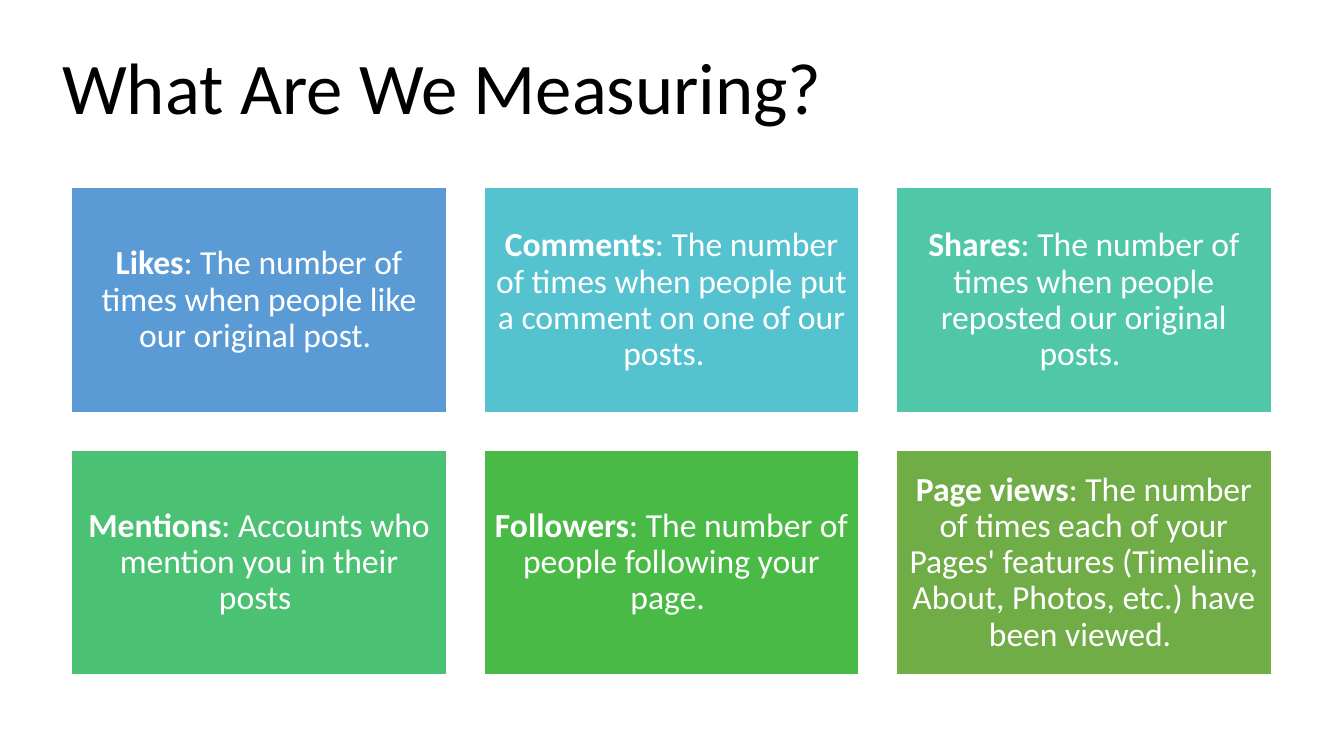
from dataclasses import dataclass

from pptx import Presentation
from pptx import util as u
from pptx.dml import color
from pptx.enum import shapes, text


@dataclass(frozen=True)
class Theme:
    font: str = "Calibri"
    title_size: float = 52
    card_size: float = 24
    ink: str = "000000"
    paper: str = "FFFFFF"
    blue: str = "5B9BD5"
    cyan: str = "55C3CF"
    teal: str = "50C8A7"
    mint: str = "4BC174"
    green: str = "4ABA46"
    olive: str = "70AD47"


@dataclass(frozen=True)
class Metric:
    name: str
    meaning: str
    fill: str


THEME = Theme()
COLUMNS = 3
CARD_LEFT, CARD_TOP = 51.1, 134.1
CARD_WIDTH, CARD_HEIGHT = 267.8, 160.7
CARD_GAP = 26.8
CARD_INSET = 7.2

METRICS = [
    Metric("Likes", ": The number of times when people like our original post. ", THEME.blue),
    Metric("Comments", ": The number of times when people put a comment on one of our posts.  ", THEME.cyan),
    Metric("Shares", ": The number of times when people reposted our original posts. ", THEME.teal),
    Metric("Mentions", ": Accounts who mention you in their posts ", THEME.mint),
    Metric("Followers", ": The number of people following your page. ", THEME.green),
    Metric(
        "Page views",
        ": The number of times each of your Pages' features "
        "(Timeline, About, Photos, etc.) have been viewed. ",
        THEME.olive,
    ),
]


def rgb(value: str) -> color.RGBColor:
    return color.RGBColor.from_string(value)


def add_span(para, content: str, *, size: float, ink: str, bold: bool = False) -> None:
    span = para.add_run()
    span.text = content
    span.font.name = THEME.font
    span.font.size = u.Pt(size)
    span.font.bold = bold
    span.font.color.rgb = rgb(ink)


def prepare_para(box, align):
    frame = box.text_frame
    frame.word_wrap = True
    frame.vertical_anchor = text.MSO_ANCHOR.MIDDLE
    para = frame.paragraphs[0]
    para.alignment = align
    para.line_spacing = 0.9
    return para


def add_title(page, content: str) -> None:
    box = page.shapes.add_textbox(u.Pt(37.4), u.Pt(-38.2), u.Pt(743.8), u.Pt(206.6))
    para = prepare_para(box, text.PP_ALIGN.LEFT)
    add_span(para, content, size=THEME.title_size, ink=THEME.ink)


def add_card(page, metric: Metric, left: float, top: float) -> None:
    box = page.shapes.add_shape(
        shapes.MSO_SHAPE.RECTANGLE,
        u.Pt(left), u.Pt(top), u.Pt(CARD_WIDTH), u.Pt(CARD_HEIGHT),
    )
    box.shadow.inherit = False
    box.fill.solid()
    box.fill.fore_color.rgb = rgb(metric.fill)
    box.line.color.rgb = rgb(THEME.paper)
    box.line.width = u.Pt(1)
    frame = box.text_frame
    frame.margin_left = frame.margin_right = u.Pt(CARD_INSET)
    frame.margin_top = frame.margin_bottom = u.Pt(CARD_INSET)
    para = prepare_para(box, text.PP_ALIGN.CENTER)
    add_span(para, metric.name, size=THEME.card_size, ink=THEME.paper, bold=True)
    add_span(para, metric.meaning, size=THEME.card_size, ink=THEME.paper)


def main() -> None:
    deck = Presentation()
    deck.slide_width, deck.slide_height = u.Pt(960), u.Pt(540)
    page = deck.slides.add_slide(deck.slide_layouts[6])
    add_title(page, "What Are We Measuring?")
    for index, metric in enumerate(METRICS):
        row, column = divmod(index, COLUMNS)
        left = CARD_LEFT + column * (CARD_WIDTH + CARD_GAP)
        top = CARD_TOP + row * (CARD_HEIGHT + CARD_GAP)
        add_card(page, metric, left, top)
    deck.save("out.pptx")


if __name__ == "__main__":
    main()
